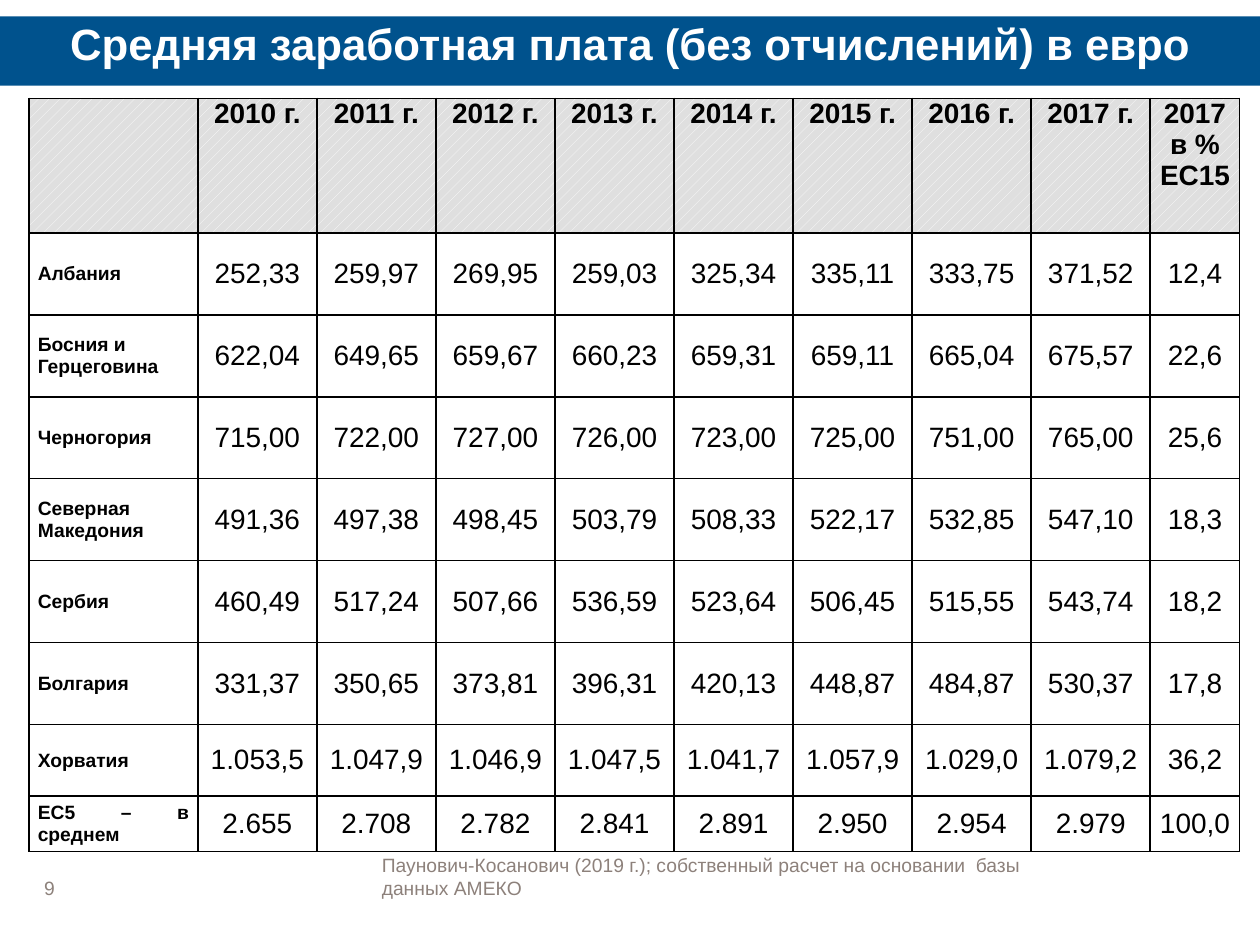
from lxml import etree
from pptx import Presentation
from pptx import util as u
from pptx.dml.color import RGBColor
from pptx.enum import dml, shapes, text
from pptx.oxml.ns import qn


def color(value):
    return RGBColor.from_string(value)


def write(frame, words, size, shade, bold=False, align=text.PP_ALIGN.LEFT,
          anchor=text.MSO_ANCHOR.MIDDLE):
    frame.word_wrap = True
    frame.vertical_anchor = anchor
    para = frame.paragraphs[0]
    para.alignment = align
    span = para.add_run()
    span.text = words
    span.font.name = "Arial"
    span.font.size = u.Pt(size)
    span.font.bold = bold
    span.font.color.rgb = color(shade)
    return para


deck = Presentation()
deck.slide_width = u.Inches(10)
deck.slide_height = u.Inches(7.5)
page = deck.slides.add_slide(deck.slide_layouts[6])

banner = page.shapes.add_shape(
    shapes.MSO_SHAPE.RECTANGLE, u.Inches(0), u.Inches(0.13), u.Inches(10), u.Inches(0.55))
banner.shadow.inherit = False
banner.fill.solid()
banner.fill.fore_color.rgb = color("00528D")
banner.line.fill.background()
banner.text_frame.margin_left = banner.text_frame.margin_right = u.Inches(0.02)
banner.text_frame.margin_top = banner.text_frame.margin_bottom = 0
write(banner.text_frame, "Средняя заработная плата (без отчислений) в евро", 25, "FFFFFF",
      True, text.PP_ALIGN.CENTER, text.MSO_ANCHOR.TOP)

headings = [""] + [f"{year} г." for year in range(2010, 2018)] + ["2017 в % EС15"]
wages = [
    ("Албания", "252,33 259,97 269,95 259,03 325,34 335,11 333,75 371,52 12,4"),
    ("Босния и Герцеговина", "622,04 649,65 659,67 660,23 659,31 659,11 665,04 675,57 22,6"),
    ("Черногория", "715,00 722,00 727,00 726,00 723,00 725,00 751,00 765,00 25,6"),
    ("Северная Македония", "491,36 497,38 498,45 503,79 508,33 522,17 532,85 547,10 18,3"),
    ("Сербия", "460,49 517,24 507,66 536,59 523,64 506,45 515,55 543,74 18,2"),
    ("Болгария", "331,37 350,65 373,81 396,31 420,13 448,87 484,87 530,37 17,8"),
    ("Хорватия", "1.053,5 1.047,9 1.046,9 1.047,5 1.041,7 1.057,9 1.029,0 1.079,2 36,2"),
    ("EС5 – в среднем", "2.655 2.708 2.782 2.841 2.891 2.950 2.954 2.979 100,0"),
]
rows = [headings] + [[country] + values.split() for country, values in wages]

table_width, country_width, share_width = 9.61, 1.34, 0.71
year_width = (table_width - country_width - share_width) / 8
widths = [country_width] + [year_width] * 8 + [share_width]
heights = [1.07] + [0.65] * 6 + [0.57, 0.44]

table = page.shapes.add_table(
    len(rows), len(widths), u.Inches(0.23), u.Inches(0.78),
    u.Inches(table_width), u.Inches(sum(heights))).table
table.first_row = False
table.horz_banding = False
for column, width in zip(table.columns, widths):
    column.width = u.Inches(width)
for row, height in zip(table.rows, heights):
    row.height = u.Inches(height)

for row_index, row in enumerate(rows):
    for column_index, words in enumerate(row):
        cell = table.cell(row_index, column_index)
        cell.margin_left = cell.margin_right = u.Inches(0.07)
        cell.margin_top = cell.margin_bottom = 0
        properties = cell._tc.get_or_add_tcPr()
        for side in ("lnL", "lnR", "lnT", "lnB"):
            border = etree.SubElement(properties, qn(f"a:{side}"), w=str(u.Pt(1)))
            paint = etree.SubElement(border, qn("a:solidFill"))
            etree.SubElement(paint, qn("a:srgbClr"), val="000000")
        if row_index == 0:
            cell.fill.patterned()
            cell.fill.pattern = dml.MSO_PATTERN.PERCENT_20
            cell.fill.fore_color.rgb = color("FFFFFF")
            cell.fill.back_color.rgb = color("DFDFDF")
        else:
            cell.fill.background()
            cell.vertical_anchor = text.MSO_ANCHOR.MIDDLE
        if not words:
            continue
        is_country = column_index == 0
        align = text.PP_ALIGN.CENTER
        if is_country:
            align = text.PP_ALIGN.LEFT if words.startswith("Босния") else text.PP_ALIGN.JUSTIFY
        para = write(cell.text_frame, words, 11 if is_country else 16, "000000",
                     is_country or row_index == 0, align, None)
        if row_index == 0:
            para.space_after = u.Pt(12)

source = "Паунович-Косанович (2019 г.); собственный расчет на основании  базы данных AMEКO"
for left, width, words in [(0.35, 0.39, "9"), (3.03, 5.59, source)]:
    box = page.shapes.add_textbox(
        u.Inches(left), u.Inches(6.79), u.Inches(width), u.Inches(0.35))
    frame = box.text_frame
    frame.margin_left = frame.margin_right = frame.margin_top = frame.margin_bottom = 0
    write(frame, words, 11, "8D817B", anchor=text.MSO_ANCHOR.BOTTOM)

deck.save("out.pptx")
